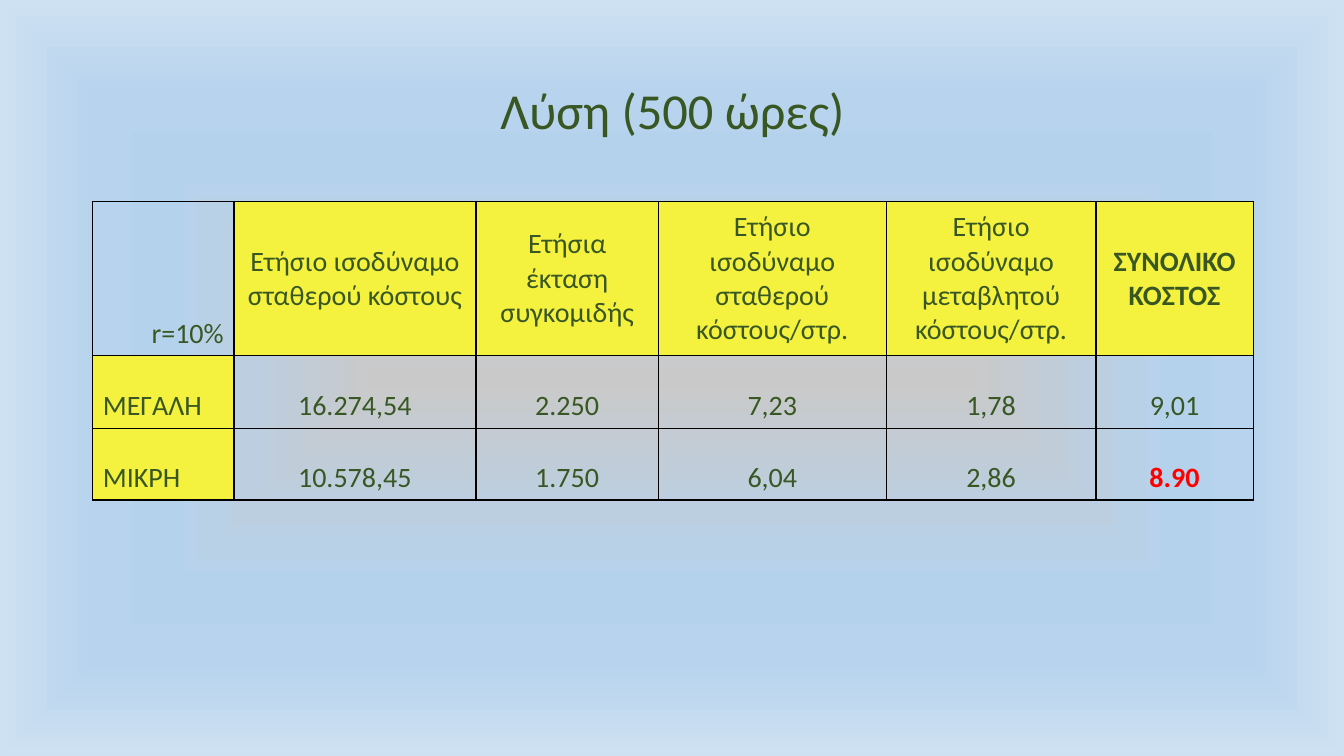
from pptx import Presentation
from pptx.dml.color import RGBColor
from pptx.enum.text import MSO_ANCHOR as Anchor, PP_ALIGN as Align
from pptx.oxml import parse_xml
from pptx.oxml.ns import nsdecls
from pptx.util import Inches, Pt

COLORS = {"text": "385723", "header": "F5F13F", "best": "FF0000", "border": "000000"}
BACKGROUND_STOPS = {0: "C9C9C9", 36: "BBCFE1", 45: "B8D1E7", 54: "B5D2EC",
                    61: "B5D2EC", 65: "B5D2EC", 75: "B7D3ED", 100: "CEE1F2"}
COLUMN_WIDTHS = [1.4, 2.4, 1.81, 2.26, 2.08, 1.56]
ROW_HEIGHTS = [1.53, 0.72, 0.71]
ROWS = [
    ["r=10%", "Ετήσιο ισοδύναμο σταθερού κόστους", "Ετήσια έκταση συγκομιδής",
     "Ετήσιο ισοδύναμο σταθερού κόστους/στρ.",
     "Ετήσιο ισοδύναμο μεταβλητού κόστους/στρ.", "ΣΥΝΟΛΙΚΟ ΚΟΣΤΟΣ"],
    ["ΜΕΓΑΛΗ", "16.274,54", "2.250", "7,23", "1,78", "9,01"],
    ["ΜΙΚΡΗ", "10.578,45", "1.750", "6,04", "2,86", "8.90"],
]


def write(text_frame, text, size, align, color="text", bold=False):
    text_frame.text = text
    paragraph = text_frame.paragraphs[0]
    paragraph.alignment = align
    font = paragraph.font
    font.name, font.size, font.bold = "Calibri", Pt(size), bold
    font.color.rgb = RGBColor.from_string(COLORS[color])
    return paragraph


def add_borders(cell):
    properties = cell._tc.get_or_add_tcPr()
    for index, side in enumerate(["lnL", "lnR", "lnT", "lnB"]):
        properties.insert(index, parse_xml(
            f'<a:{side} {nsdecls("a")} w="{Pt(1)}"><a:solidFill>'
            f'<a:srgbClr val="{COLORS["border"]}"/></a:solidFill></a:{side}>'))


presentation = Presentation()
presentation.slide_width, presentation.slide_height = Inches(13.33), Inches(7.5)
slide = presentation.slides.add_slide(presentation.slide_layouts[6])

# Background: rectangular gradient running out from the centre
background = slide.background
background.fill.solid()
solid_fill = background._cSld.bg.bgPr[0]
stops = "".join(f'<a:gs pos="{position * 1000}"><a:srgbClr val="{color}"/></a:gs>'
                for position, color in BACKGROUND_STOPS.items())
solid_fill.getparent().replace(solid_fill, parse_xml(
    f'<a:gradFill {nsdecls("a")} rotWithShape="1"><a:gsLst>{stops}</a:gsLst>'
    '<a:path path="shape"><a:fillToRect l="50000" t="50000" r="50000" b="50000"/>'
    '</a:path></a:gradFill>'))

# Title
left, width = Inches(0.92), Inches(11.5)
title = slide.shapes.add_textbox(left, Inches(0.4), width, Inches(1.45)).text_frame
title.word_wrap = True
title.vertical_anchor = Anchor.MIDDLE
write(title, "Λύση (500 ώρες)", 36, Align.CENTER).line_spacing = 0.9

# Cost table
table = slide.shapes.add_table(len(ROWS), len(COLUMN_WIDTHS), left, Inches(2),
                               width, Inches(sum(ROW_HEIGHTS))).table
table.first_row = table.horz_banding = False
for column, column_width in zip(table.columns, COLUMN_WIDTHS):
    column.width = Inches(column_width)

for row_index, (texts, height) in enumerate(zip(ROWS, ROW_HEIGHTS)):
    table.rows[row_index].height = Inches(height)
    for column_index, text in enumerate(texts):
        cell = table.cell(row_index, column_index)
        is_corner = row_index == column_index == 0
        is_column_header = row_index == 0 and not is_corner
        is_row_header = column_index == 0 and not is_corner
        is_best = text == "8.90"

        if is_column_header or is_row_header:
            cell.fill.solid()
            cell.fill.fore_color.rgb = RGBColor.from_string(COLORS["header"])
        else:
            cell.fill.background()
        cell.vertical_anchor = Anchor.MIDDLE if is_column_header else Anchor.BOTTOM
        align = Align.RIGHT if is_corner else Align.LEFT if is_row_header else Align.CENTER
        is_total_header = is_column_header and column_index == len(texts) - 1
        write(cell.text_frame, text, 20, align, "best" if is_best else "text",
              bold=is_best or is_total_header)
        add_borders(cell)

presentation.save("out.pptx")
